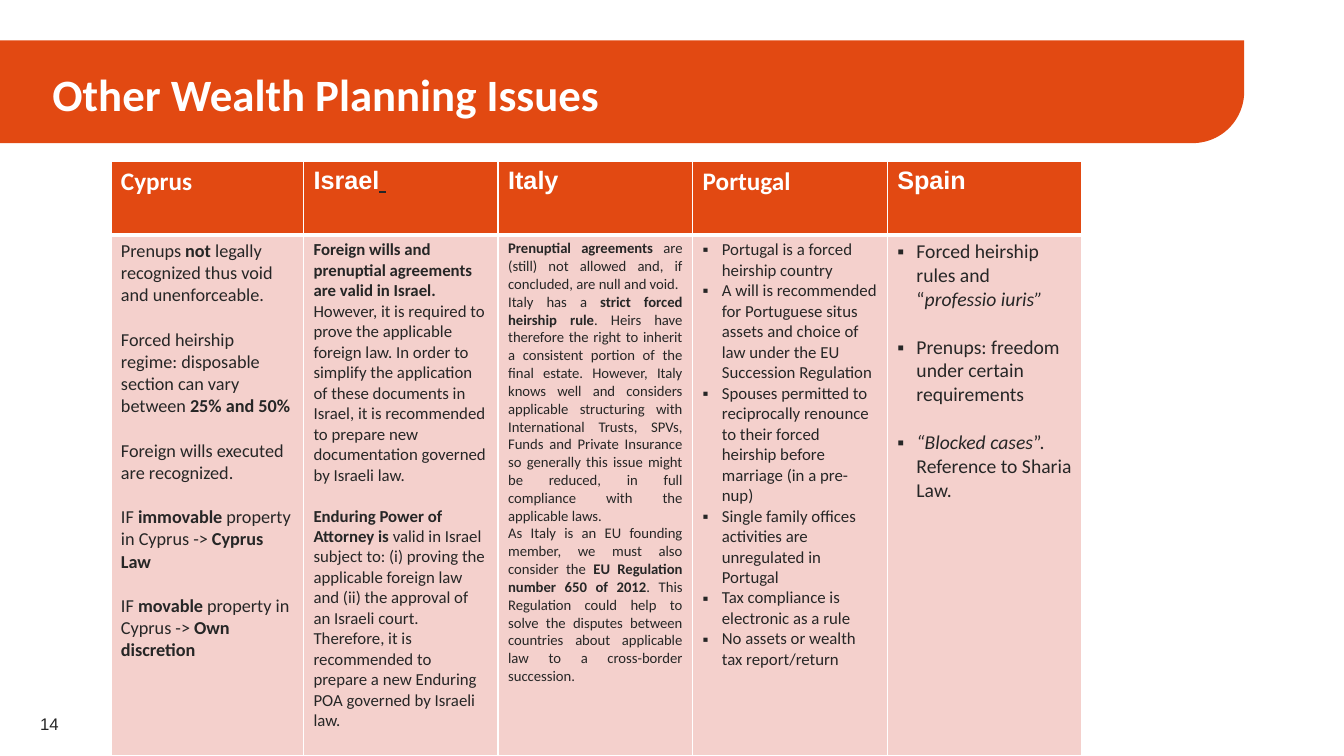
from lxml import etree
from pptx import Presentation
from pptx.dml.color import RGBColor
from pptx.enum.shapes import MSO_SHAPE
from pptx.enum.text import MSO_ANCHOR, PP_ALIGN
from pptx.oxml.ns import qn
from pptx.util import Emu, Pt

LEFT, JUSTIFY = PP_ALIGN.LEFT, PP_ALIGN.JUSTIFY
MIDDLE = MSO_ANCHOR.MIDDLE
BAND_SHAPE = MSO_SHAPE.ROUND_1_RECTANGLE
EMU_PER_PX = 9144
TITLE_ONLY = 5

COLORS = {"orange": "E24912", "pink": "F4D0CC", "text": "262626", "white": "FFFFFF"}

HEADERS = [("Cyprus", "Calibri"), ("Israel* *", "Arial"), ("Italy", "Arial"),
           ("Portugal", "Calibri"), ("Spain", "Arial")]

# Asterisks enclose the emphasised words of a paragraph.
COLUMNS = [
    {"size": 13, "gap": 15.9, "paragraphs": [
        "Prenups *not* legally recognized thus void and unenforceable.",
        "Forced heirship regime: disposable section can vary between *25% and 50%*",
        "Foreign wills executed are recognized.",
        "IF *immovable* property in Cyprus -> *Cyprus Law*",
        "IF *movable* property in Cyprus -> *Own discretion*",
    ]},
    {"size": 12, "gap": 14.6, "paragraphs": [
        "*Foreign wills and prenuptial agreements are valid in Israel. *However, it is "
        "required to prove the applicable foreign law. In order to simplify the "
        "application of these documents in Israel, it is recommended to prepare new "
        "documentation governed by Israeli law.",
        "*Enduring Power of Attorney is *valid in Israel subject to: (i) proving the "
        "applicable foreign law and (ii) the approval of an Israeli court. Therefore, it "
        "is recommended to prepare a new Enduring POA governed by Israeli law.",
    ]},
    {"size": 10.5, "align": JUSTIFY, "paragraphs": [
        "*Prenuptial agreements *are (still) not allowed and, if concluded, are null and "
        "void.",
        "Italy has a *strict forced heirship rule*. Heirs have therefore the right to "
        "inherit a consistent portion of the final estate. However, Italy knows well and "
        "considers applicable structuring with International Trusts, SPVs, Funds and "
        "Private Insurance so generally this issue might be reduced, in full compliance "
        "with the applicable laws.",
        "As Italy is an EU founding member, we must also consider the *EU Regulation "
        "number 650 of 2012*. This Regulation could help to solve the disputes between "
        "countries about applicable law to a cross-border succession.",
    ]},
    {"size": 12, "bullet": True, "paragraphs": [
        "Portugal is a forced heirship country",
        "A will is recommended for Portuguese situs assets and choice of law under the EU "
        "Succession Regulation",
        "Spouses permitted to reciprocally renounce to their forced heirship before "
        "marriage (in a pre-nup)",
        "Single family offices activities are unregulated in Portugal",
        "Tax compliance is electronic as a rule",
        "No assets or wealth tax report/return",
    ]},
    {"size": 14, "bullet": True, "gap": 17.1, "emphasis": "italic", "paragraphs": [
        "Forced heirship rules and “*professio iuris”*",
        "Prenups: freedom under certain requirements",
        "*“Blocked cases*”. Reference to Sharia Law.",
    ]},
]


def px(length):
    return Emu(length * EMU_PER_PX)


def rgb(name):
    return RGBColor.from_string(COLORS[name])


class SlideBuilder:
    def __init__(self, presentation):
        self.slide = presentation.slides.add_slide(presentation.slide_layouts[TITLE_ONLY])

    def band(self, left, top, width, height):
        """Draw the title band, rounded at its lower right corner, behind the title."""
        shape = self.slide.shapes.add_shape(BAND_SHAPE, *map(px, (left, top, width, height)))
        shape.shadow.inherit = False
        shape.adjustments[0] = 0.5
        shape.fill.solid()
        shape.fill.fore_color.rgb = rgb("orange")
        shape.line.fill.background()
        shape.element.spPr.find(qn("a:xfrm")).set("flipV", "1")
        self.slide.shapes.title.element.addprevious(shape.element)

    def title(self, text, left, top, width, height):
        shape = self.slide.shapes.title
        shape.left, shape.top, shape.width, shape.height = map(px, (left, top, width, height))
        shape.text_frame.vertical_anchor = MIDDLE
        self.fill_text(shape.text_frame, [text], 32, color="white", bold=True)

    def label(self, text, left, top, width, height):
        shape = self.slide.shapes.add_textbox(*map(px, (left, top, width, height)))
        shape.text_frame.word_wrap = True
        shape.text_frame.vertical_anchor = MIDDLE
        self.fill_text(shape.text_frame, [text], 12, font="Arial")

    def table(self, left, top, column_widths, row_heights):
        frame = self.slide.shapes.add_table(
            len(row_heights), len(column_widths), px(left), px(top),
            px(sum(column_widths)), px(sum(row_heights)))
        table = frame.table
        for column, width in zip(table.columns, column_widths):
            column.width = px(width)
        for row, height in zip(table.rows, row_heights):
            row.height = px(height)
        return table

    def style_cell(self, cell, fill, top_border, bottom_border):
        properties = cell._tc.get_or_add_tcPr()
        widths = {"L": 1, "R": 1, "T": top_border, "B": bottom_border}
        for side, width in widths.items():
            line = etree.SubElement(properties, qn(f"a:ln{side}"), w=str(Pt(width)))
            solid = etree.SubElement(line, qn("a:solidFill"))
            etree.SubElement(solid, qn("a:srgbClr"), val=COLORS["white"])
        cell.fill.solid()
        cell.fill.fore_color.rgb = rgb(fill)

    def fill_text(self, text_frame, paragraphs, size, font="Calibri", color="text",
                  bold=False, align=LEFT, gap=0, bullet=False, emphasis="bold"):
        """Fill a text frame, with a gap in points between its paragraphs."""
        for index, text in enumerate(paragraphs):
            paragraph = text_frame.add_paragraph() if index else text_frame.paragraphs[0]
            paragraph.alignment = align
            if index and gap:
                paragraph.space_before = Pt(gap)
            if bullet:
                self.add_bullet(paragraph)
            paragraph.font.size = Pt(size)
            paragraph.font.name = font
            paragraph.font.bold = bold
            paragraph.font.color.rgb = rgb(color)
            for position, part in enumerate(text.split("*")):
                if part:
                    run = paragraph.add_run()
                    run.text = part
                    if position % 2:
                        self.emphasise(run.font, emphasis)

    def emphasise(self, font, emphasis):
        if emphasis == "bold":
            font.bold = True
        elif emphasis == "italic":
            font.italic = True
        else:
            font.underline = True

    def add_bullet(self, paragraph):
        properties = paragraph._p.get_or_add_pPr()
        properties.set("marL", str(px(19)))
        properties.set("indent", str(px(-19)))
        etree.SubElement(properties, qn("a:buFont"), typeface="Arial")
        etree.SubElement(properties, qn("a:buChar"), char="▪")


def main():
    presentation = Presentation()
    presentation.slide_width, presentation.slide_height = px(1333), px(750)
    builder = SlideBuilder(presentation)
    builder.band(0, 40, 1234, 102)
    builder.title("Other Wealth Planning Issues", 42, 48, 878, 90)
    builder.label("14", 30, 698, 63, 40)

    table = builder.table(110, 160, [191] + [193] * 4, [73, 517])
    for index, ((country, font), column) in enumerate(zip(HEADERS, COLUMNS)):
        header, body = table.cell(0, index), table.cell(1, index)
        builder.style_cell(header, "orange", 1, 3)
        builder.fill_text(header.text_frame, [country], 18, font, "white", bold=True,
                          emphasis="underline")
        builder.style_cell(body, "pink", 3, 1)
        builder.fill_text(body.text_frame, **column)
    israel_header = table.cell(0, 1).text_frame.paragraphs[0]
    israel_header.runs[1].font.color.rgb = rgb("text")

    presentation.save("out.pptx")


if __name__ == "__main__":
    main()
